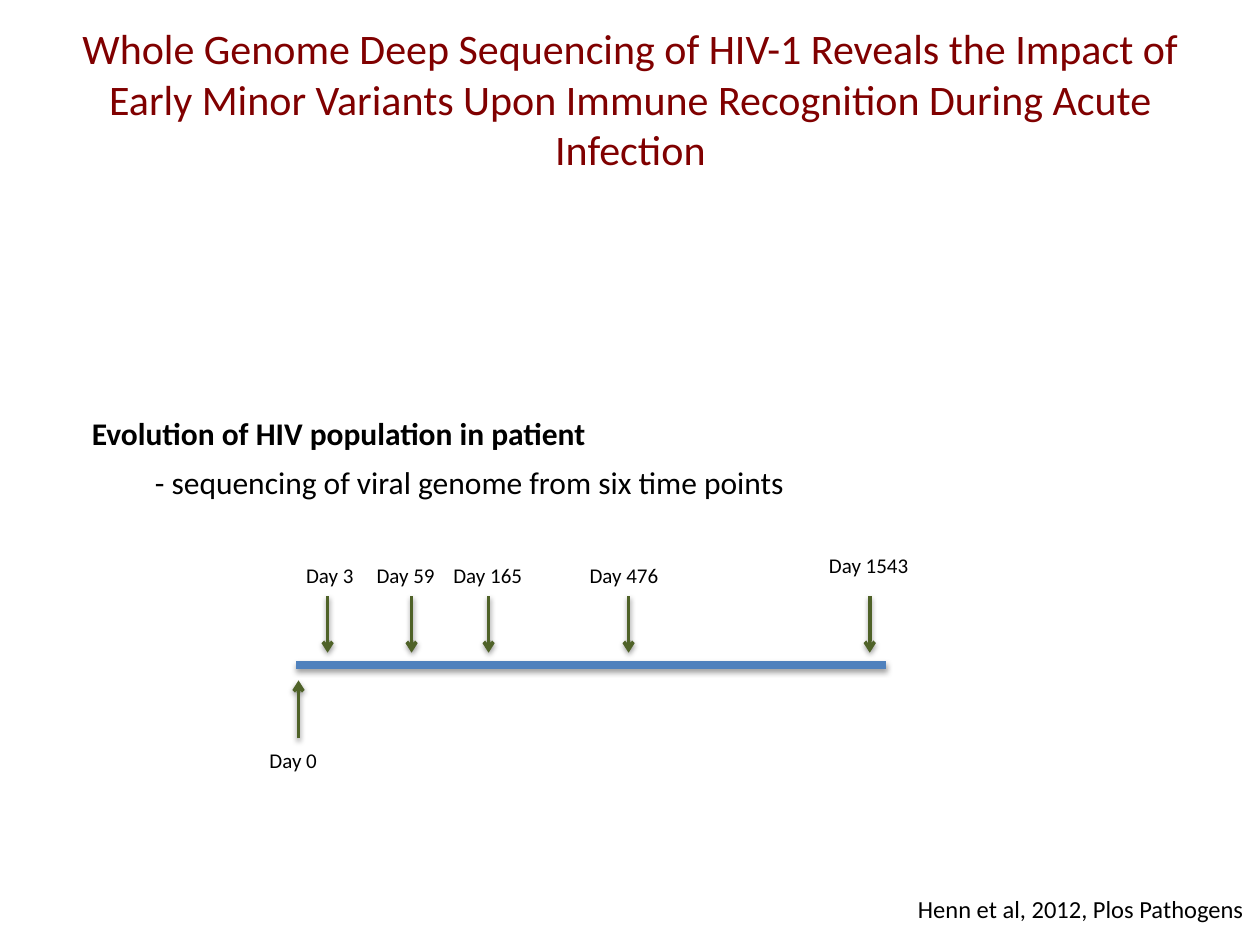
from lxml import etree
from pptx import Presentation
from pptx.dml.color import RGBColor
from pptx.enum.shapes import MSO_CONNECTOR as CONN
from pptx.enum.text import MSO_AUTO_SIZE as FIT, PP_ALIGN as ALIGN
from pptx.oxml.ns import qn
from pptx.util import Pt

MAROON = RGBColor(0x80, 0x00, 0x00)
BLACK = RGBColor(0x00, 0x00, 0x00)
BLUE = RGBColor(0x4F, 0x81, 0xBD)
GREEN = RGBColor(0x4F, 0x62, 0x28)

prs = Presentation()
prs.slide_width, prs.slide_height = Pt(720), Pt(540)
s = prs.slides.add_slide(prs.slide_layouts[6])


def add_text(text, x, y, w, h, size=12, color=BLACK, align=ALIGN.LEFT,
             wrap=False, spacing=None, bold_first=False, indent=0):
    """Add a text box; lines after the first are indented by `indent` points."""
    tf = s.shapes.add_textbox(Pt(x), Pt(y), Pt(w), Pt(h)).text_frame
    tf.word_wrap = wrap
    tf.auto_size = FIT.SHAPE_TO_FIT_TEXT
    for i, line in enumerate(text.split("\n")):
        p = tf.paragraphs[0] if i == 0 else tf.add_paragraph()
        p.alignment = align
        p.line_spacing = spacing
        if i and indent:
            p._p.get_or_add_pPr().set("marL", str(Pt(indent)))
        r = p.add_run()
        r.text = line
        r.font.name, r.font.size = "Calibri", Pt(size)
        r.font.bold = bold_first and i == 0
        r.font.color.rgb = color


def add_line(x1, y1, x2, y2, color, width, arrow=False):
    """Add a straight line with a soft shadow below it."""
    sp = s.shapes.add_connector(CONN.STRAIGHT, Pt(x1), Pt(y1), Pt(x2), Pt(y2))
    sp.line.color.rgb = color
    sp.line.width = Pt(width)
    if arrow:
        etree.SubElement(sp.line._get_or_add_ln(), qn("a:tailEnd"), type="arrow")
    effects = etree.SubElement(sp._element.spPr, qn("a:effectLst"))
    shadow = etree.SubElement(effects, qn("a:outerShdw"), blurRad=str(Pt(3.1)),
                              dist=str(Pt(1.6)), dir="5400000", rotWithShape="0")
    tint = etree.SubElement(shadow, qn("a:srgbClr"), val="000000")
    etree.SubElement(tint, qn("a:alpha"), val="38000")


# Title and citation
add_text("Whole Genome Deep Sequencing of HIV-1 Reveals the Impact of Early "
         "Minor Variants Upon Immune Recognition During Acute Infection",
         15, 9.5, 690.5, 94.5, size=24, color=MAROON, align=ALIGN.CENTER, wrap=True)
add_text("Henn et al, 2012, Plos Pathogens", 517.5, 507.6, 202.5, 24.5, size=14)

# Study summary
add_text("Evolution of HIV population in patient\n"
         "- sequencing of viral genome from six time points",
         45.4, 226.8, 415.4, 62.6, size=18, spacing=1.3, bold_first=True, indent=36)

# Timeline
add_line(169.2, 380.2, 506.2, 380.2, BLUE, 4.5)

# Time points: day, arrow x, arrow start y, arrow end y, label x, y, width
ABOVE, BELOW = (340.6, 373), (421.9, 388.8)
time_points = [
    (0, 170.6, BELOW, 146.9, 423.4, 42.5),
    (3, 187.2, ABOVE, 167.8, 318.2, 42.5),
    (59, 235.2, ABOVE, 208.1, 318.2, 48.2),
    (165, 279.2, ABOVE, 252, 318.2, 54.7),
    (476, 359.2, ABOVE, 329.8, 318.2, 54.7),
    (1543, 497, ABOVE, 466.6, 312.5, 61.2),
]
for day, x, (start, end), label_x, label_y, label_w in time_points:
    add_line(x, start, x, end, GREEN, 2, arrow=True)
    add_text(f"Day {day}", label_x, label_y, label_w, 21.6)

prs.save("out.pptx")
